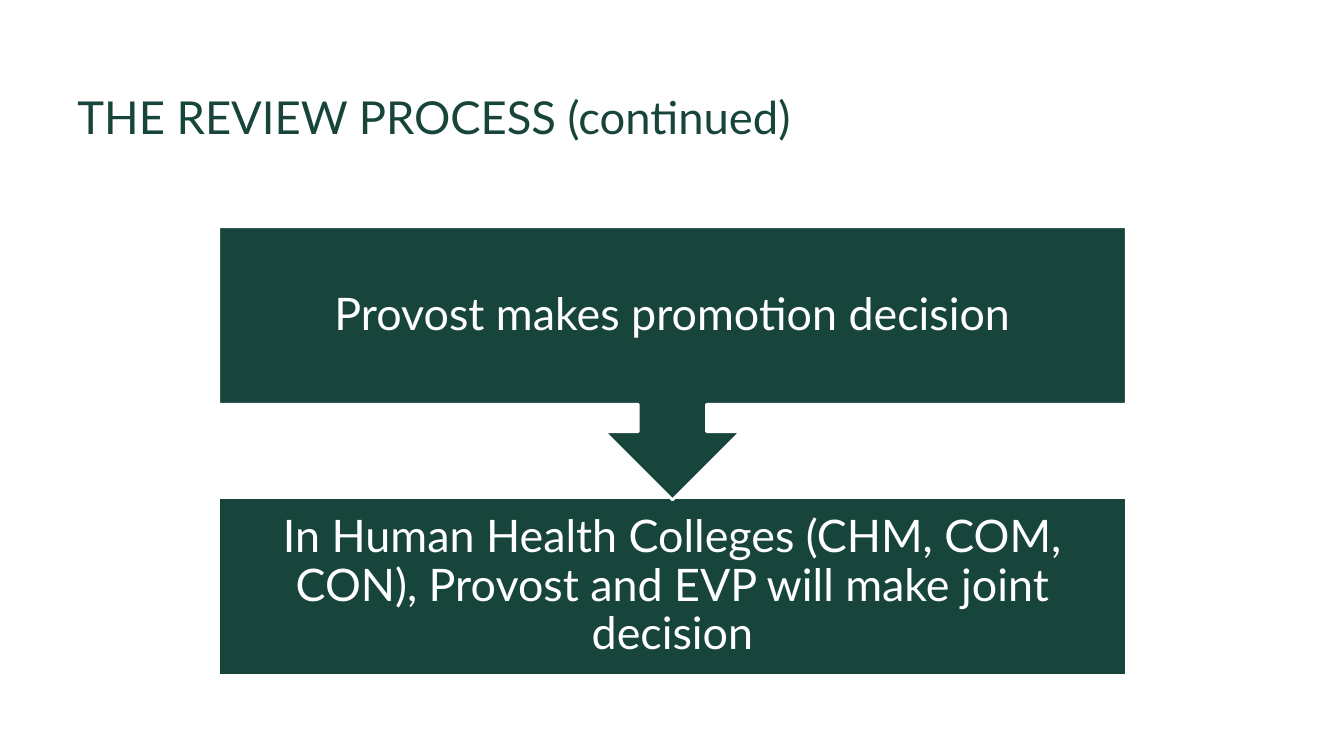
from dataclasses import dataclass

from pptx import Presentation
from pptx import util as u
from pptx.dml.color import RGBColor
from pptx.enum import shapes, text


@dataclass(frozen=True)
class Theme:
    """Colours, font and type sizes of the slide."""
    green: RGBColor = RGBColor(0x18, 0x45, 0x3B)
    white: RGBColor = RGBColor(0xFF, 0xFF, 0xFF)
    font: str = "Lato"
    title_size: float = 32.4
    step_size: float = 32
    outline: float = 2


class SlideBuilder:
    """Draws styled elements on one slide."""

    def __init__(self, slide, theme):
        self.slide = slide
        self.theme = theme

    def set_words(self, sp, words, size, color, align):
        """Set the words of a shape and format them."""
        tf = sp.text_frame
        tf.text = words
        tf.word_wrap = True
        tf.vertical_anchor = text.MSO_ANCHOR.MIDDLE
        p = tf.paragraphs[0]
        p.alignment = align
        font = p.runs[0].font
        font.name = self.theme.font
        font.size = u.Pt(size)
        font.color.rgb = color
        return tf

    def title(self, words, left, top, width, height):
        """Add the slide heading."""
        sp = self.slide.shapes.add_textbox(*map(u.Inches, (left, top, width, height)))
        self.set_words(sp, words, self.theme.title_size, self.theme.green, text.PP_ALIGN.LEFT)

    def step(self, kind, words, left, top, width, height):
        """Add one filled step of the process."""
        sp = self.slide.shapes.add_shape(kind, *map(u.Inches, (left, top, width, height)))
        sp.shadow.inherit = False
        sp.fill.solid()
        sp.fill.fore_color.rgb = self.theme.green
        sp.line.color.rgb = self.theme.white
        sp.line.width = u.Pt(self.theme.outline)
        tf = self.set_words(sp, words, self.theme.step_size, self.theme.white, text.PP_ALIGN.CENTER)
        tf.margin_left = tf.margin_right = tf.margin_top = tf.margin_bottom = u.Inches(0.25)
        tf.paragraphs[0].line_spacing = 0.9


def main():
    """Build the review process slide."""
    prs = Presentation()
    prs.slide_width, prs.slide_height = u.Inches(13.33), u.Inches(7.5)
    s = SlideBuilder(prs.slides.add_slide(prs.slide_layouts[6]), Theme())

    left, width = 2.17, 9
    s.title("THE REVIEW PROCESS (continued)", 0.67, 0.72, 12, 0.87)
    s.step(shapes.MSO_SHAPE.RECTANGLE,
           "In Human Health Colleges (CHM, COM, CON), Provost and EVP will make joint decision",
           left, 4.94, width, 1.76)
    s.step(shapes.MSO_SHAPE.DOWN_ARROW_CALLOUT, "Provost makes promotion decision",
           left, 2.25, width, 2.71)
    prs.save("out.pptx")


if __name__ == "__main__":
    main()
